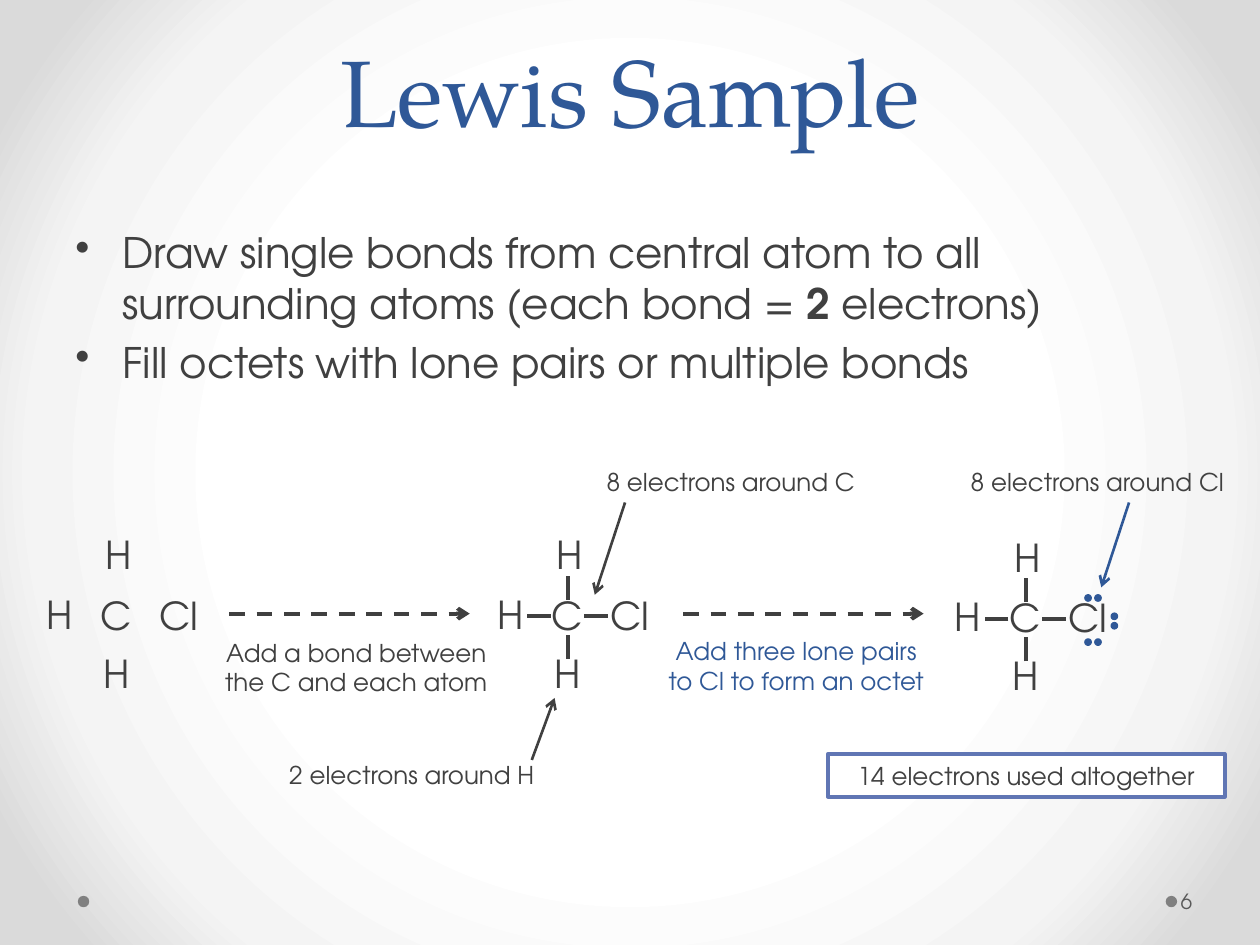
from pptx import Presentation
from pptx.dml.color import RGBColor
from pptx.enum.dml import MSO_LINE as Dash
from pptx.enum.shapes import MSO_CONNECTOR as Link, MSO_SHAPE as Form
from pptx.enum.text import MSO_ANCHOR as Anchor, PP_ALIGN as Align
from pptx.oxml import parse_xml
from pptx.oxml.ns import nsdecls, qn
from pptx.util import Cm, Pt
from lxml.etree import SubElement

BLUE = RGBColor(0x2F, 0x58, 0x97)
FRAME = RGBColor(0x60, 0x76, 0xB4)
DARK = RGBColor(0x40, 0x40, 0x40)
GREY = RGBColor(0x59, 0x59, 0x59)
DOT = RGBColor(0x80, 0x80, 0x80)
WHITE = RGBColor(0xFF, 0xFF, 0xFF)
SANS = "TeX Gyre Adventor"
SERIF = "TeX Gyre Pagella"

deck = Presentation()
deck.slide_width, deck.slide_height = Cm(25.4), Cm(19.05)
slide = deck.slides.add_slide(deck.slide_layouts[6])
shapes = slide.shapes


def write(box, paras, size, color=DARK, font=SANS, align=Align.CENTER):
    """Fill a shape with paragraphs; parts between ** are bold."""
    frame = box.text_frame
    frame.word_wrap = True
    for i, text in enumerate(paras):
        para = frame.paragraphs[0] if i == 0 else frame.add_paragraph()
        para.alignment = align
        for j, part in enumerate(text.split("**")):
            run = para.add_run()
            run.text = part
            run.font.size = Pt(size)
            run.font.name = font
            run.font.color.rgb = color
            run.font.bold = j % 2 == 1
    return frame


def draw(x1, y1, x2, y2, width=2.25, color=DARK, arrow=False):
    line = shapes.add_connector(Link.STRAIGHT, Cm(x1), Cm(y1), Cm(x2), Cm(y2))
    line.line.color.rgb = color
    line.line.width = Pt(width)
    if arrow:
        SubElement(line.line._get_or_add_ln(), qn("a:tailEnd"), type="arrow")
    SubElement(line._element.spPr, qn("a:effectLst"))
    return line


# Background: light circle fading to grey corners
stops = "".join(
    f'<a:gs pos="{pos}000"><a:srgbClr val="{tone}"/></a:gs>'
    for pos, tone in ((50, "FFFFFF"), (76, "F4F4F4"), (92, "DADADA")))
back = parse_xml(
    f'<p:bg {nsdecls("p", "a")}><p:bgPr><a:gradFill rotWithShape="1">'
    f'<a:gsLst>{stops}</a:gsLst><a:path path="circle">'
    '<a:fillToRect l="50000" t="50000" r="50000" b="50000"/></a:path>'
    '</a:gradFill><a:effectLst/></p:bgPr></p:bg>')
shapes._spTree.getparent().insert(0, back)

# Footer
for x in (23.5, 1.57):
    dot = shapes.add_shape(Form.OVAL, Cm(x), Cm(18.06), Cm(0.23), Cm(0.23))
    dot.shadow.inherit = False
    dot.fill.solid()
    dot.fill.fore_color.rgb = DOT
    dot.line.fill.background()
page = shapes.add_textbox(Cm(23.72), Cm(17.65), Cm(1.55), Cm(1.02))
frame = write(page, ["6"], 12, GREY, align=Align.LEFT)
frame.margin_left = Cm(0.08)
frame.vertical_anchor = Anchor.MIDDLE

# Title and bullets
title = shapes.add_textbox(Cm(1.27), Cm(0), Cm(22.86), Cm(3.07))
frame = write(title, ["Lewis Sample"], 54, BLUE, SERIF)
frame.vertical_anchor = Anchor.BOTTOM
frame.paragraphs[0].line_spacing = Pt(58)

body = shapes.add_textbox(Cm(1.27), Cm(4.45), Cm(22.86), Cm(12.57))
frame = write(body, [
    "Draw single bonds from central atom to all surrounding atoms "
    "(each bond = **2** electrons)",
    "Fill octets with lone pairs or multiple bonds",
], 24, align=Align.LEFT)
for para in frame.paragraphs:
    para.space_before = Pt(4.8)
    props = para._p.get_or_add_pPr()
    props.set("marL", str(Cm(0.95)))
    props.set("indent", str(-Cm(0.95)))
    SubElement(props, qn("a:buChar"), char="•")

# Molecules: offsets are taken from the corner of the central atom
ATOMS = (("C", 0, 0, 1.14), ("H", 0.1, -1.22, 1.04), ("H", 0.06, 1.16, 1.04),
         ("H", -1.1, -0.03, 1.04), ("Cl", 1.19, -0.01, 1.3))
BONDS = ((0.23, 0.61, -0.25, 0.61), (1.38, 0.61, 0.91, 0.61),
         (0.58, 1.47, 0.58, 0.99), (0.58, 0.28, 0.58, -0.2))
for left, top, bonds in ((1.78, 11.81, ()), (10.87, 11.81, BONDS),
                         (20.1, 11.86, BONDS)):
    for name, x, y, width in ATOMS:
        atom = shapes.add_textbox(Cm(left + x), Cm(top + y), Cm(width), Cm(1.19))
        write(atom, [name], 22, align=Align.LEFT).word_wrap = False
    for x1, y1, x2, y2 in bonds:
        draw(left + x1, top + y1, left + x2, top + y2)

# Lone pairs around Cl
for x, y, dx, dy in ((21.87, 11.99, 0.2, 0), (21.87, 12.88, 0.2, 0),
                     (22.4, 12.36, 0, 0.19)):
    for i in range(2):
        dot = shapes.add_shape(Form.OVAL, Cm(x + i * dx), Cm(y + i * dy),
                               Cm(0.13), Cm(0.13))
        dot.shadow.inherit = False
        dot.fill.solid()
        dot.fill.fore_color.rgb = BLUE
        dot.line.color.rgb = BLUE
        dot.line.width = Pt(0.75)

# Steps and pointers
for x in (4.62, 13.77):
    draw(x, 12.37, x + 4.85, 12.37, arrow=True).line.dash_style = Dash.DASH
for x1, y1, x2, y2, color in ((12.6, 10.13, 11.99, 11.99, DARK),
                              (22.76, 10.13, 22.2, 11.84, BLUE),
                              (10.72, 15.32, 11.18, 14.07, DARK)):
    draw(x1, y1, x2, y2, 1.5, color, True)

# Labels
for x, y, height, paras, color in (
        (4.01, 12.73, 1.45, ["Add a bond between the C and each atom"], DARK),
        (12.88, 12.7, 1.45, ["Add three lone pairs",
                             "to Cl to form an octet"], BLUE),
        (11.56, 9.29, 0.86, ["8 electrons around C"], DARK),
        (18.95, 9.28, 0.86, ["8 electrons around Cl"], DARK),
        (5.13, 15.2, 0.86, ["2 electrons around H"], DARK)):
    label = shapes.add_textbox(Cm(x), Cm(y), Cm(6.35), Cm(height))
    write(label, paras, 14, color)

total = shapes.add_shape(Form.RECTANGLE, Cm(16.69), Cm(15.2), Cm(8), Cm(0.86))
total.shadow.inherit = False
total.fill.solid()
total.fill.fore_color.rgb = WHITE
total.line.color.rgb = FRAME
total.line.width = Pt(2.25)
write(total, ["14 electrons used altogether"], 14)

deck.save("out.pptx")
